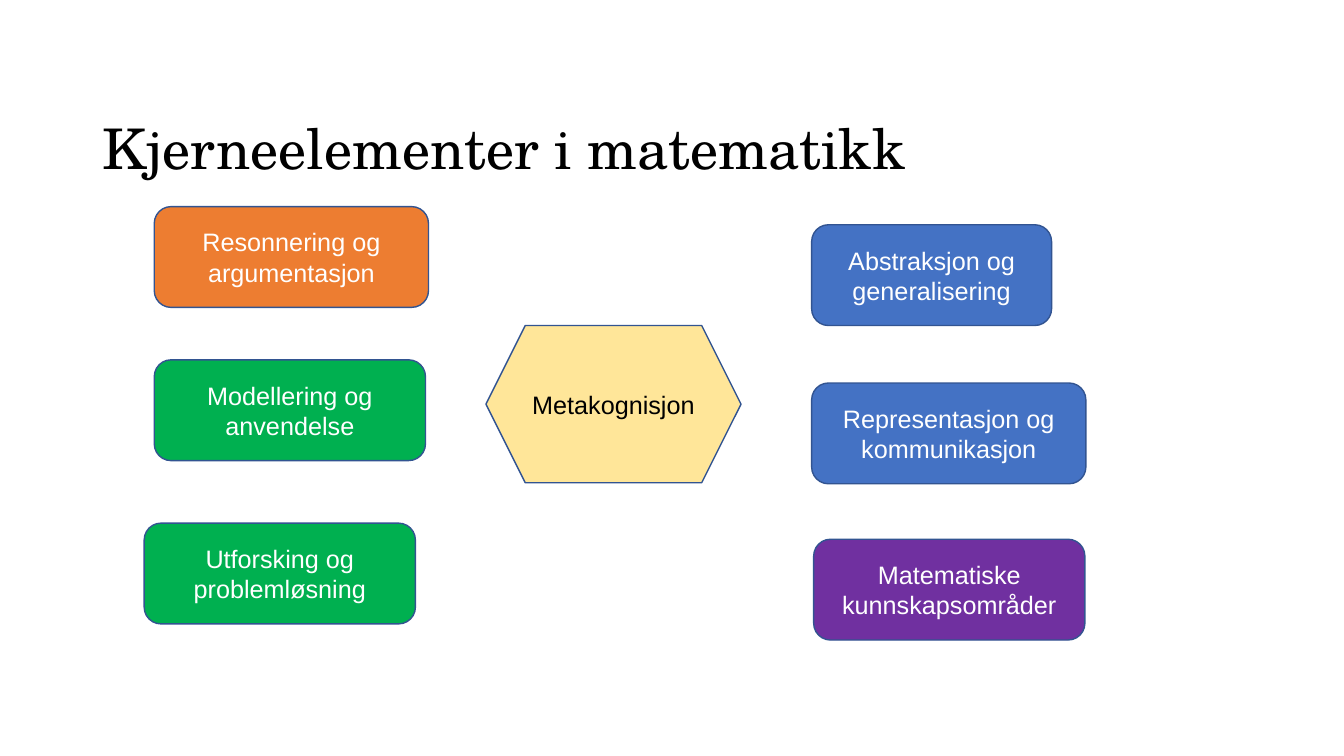
import pptx
import pptx.util
import pptx.dml.color
import pptx.enum.shapes
import pptx.enum.text

Inches = pptx.util.Inches
Pt = pptx.util.Pt
RGBColor = pptx.dml.color.RGBColor
MSO_SHAPE = pptx.enum.shapes.MSO_SHAPE
PP_ALIGN = pptx.enum.text.PP_ALIGN
MSO_ANCHOR = pptx.enum.text.MSO_ANCHOR

BLACK = RGBColor(0x00, 0x00, 0x00)
WHITE = RGBColor(0xFF, 0xFF, 0xFF)
ORANGE = RGBColor(0xED, 0x7D, 0x31)
GREEN = RGBColor(0x00, 0xB0, 0x50)
PURPLE = RGBColor(0x70, 0x30, 0xA0)
BLUE = RGBColor(0x44, 0x72, 0xC4)
YELLOW = RGBColor(0xFF, 0xE6, 0x99)
OUTLINE = RGBColor(0x32, 0x54, 0x91)

TITLE = "Kjerneelementer i matematikk"
TITLE_BOX = (0.92, 0.4, 10.2, 1.45)
CORE_HEIGHT = 1
CORE_ELEMENTS = [
    ("Resonnering og argumentasjon", 1.53, 2.05, 2.72, ORANGE),
    ("Modellering og anvendelse", 1.53, 3.57, 2.69, GREEN),
    ("Utforsking og problemløsning", 1.43, 5.19, 2.69, GREEN),
    ("Abstraksjon og generalisering", 8.05, 2.23, 2.38, BLUE),
    ("Representasjon og kommunikasjon", 8.05, 3.8, 2.72, BLUE),
    ("Matematiske kunnskapsområder", 8.07, 5.35, 2.69, PURPLE),
]
CENTRE = "Metakognisjon"
CENTRE_BOX = (4.82, 3.23, 2.53, 1.56)


def write(tf, text, anchor, align, size, name, color):
    """Put one formatted paragraph in a text frame."""
    tf.word_wrap = True
    tf.auto_size = pptx.enum.text.MSO_AUTO_SIZE.NONE
    tf.vertical_anchor = anchor
    p = tf.paragraphs[0]
    p.alignment = align
    r = p.add_run()
    r.text = text
    for key, value in {"size": Pt(size), "name": name}.items():
        setattr(r.font, key, value)
    r.font.color.rgb = color
    return p


def add_element(s, kind, box, text, fill, color):
    """Add a filled, outlined shape with a centred label."""
    sp = s.shapes.add_shape(kind, *map(Inches, box))
    sp.shadow.inherit = False
    sp.fill.solid()
    sp.fill.fore_color.rgb = fill
    sp.line.color.rgb = OUTLINE
    sp.line.width = Pt(1)
    write(sp.text_frame, text, MSO_ANCHOR.MIDDLE, PP_ALIGN.CENTER, 18, "Arial", color)


def main():
    """Build the slide and save it."""
    prs = pptx.Presentation()
    prs.slide_width, prs.slide_height = Inches(13.33), Inches(7.5)
    s = prs.slides.add_slide(prs.slide_layouts[5])
    title = s.shapes.title
    for key, value in zip(("left", "top", "width", "height"), TITLE_BOX):
        setattr(title, key, Inches(value))
    p = write(title.text_frame, TITLE, MSO_ANCHOR.BOTTOM, PP_ALIGN.LEFT,
              40, "TeX Gyre Schola", BLACK)
    p.line_spacing = 0.9
    for text, left, top, width, fill in CORE_ELEMENTS:
        add_element(s, MSO_SHAPE.ROUNDED_RECTANGLE, (left, top, width, CORE_HEIGHT),
                    text, fill, WHITE)
    add_element(s, MSO_SHAPE.HEXAGON, CENTRE_BOX, CENTRE, YELLOW, BLACK)
    prs.save("out.pptx")


if __name__ == "__main__":
    main()
